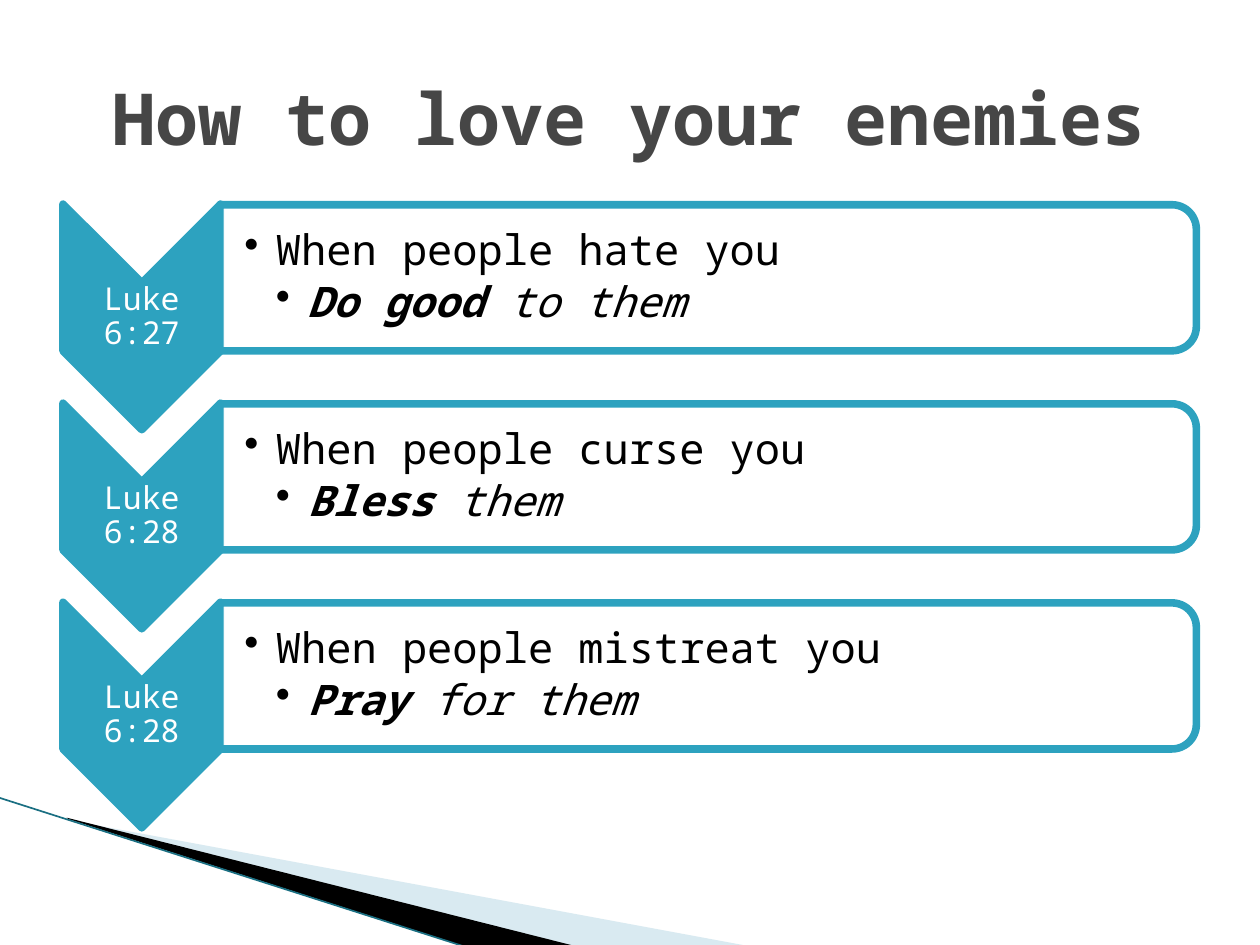
from lxml.etree import SubElement
from pptx import Presentation
from pptx.dml.color import RGBColor
from pptx.enum.shapes import MSO_CONNECTOR, MSO_SHAPE
from pptx.enum.text import MSO_ANCHOR, PP_ALIGN
from pptx.oxml.ns import qn
from pptx.util import Inches, Pt

TEAL = RGBColor(0x2D, 0xA2, 0xBF)
DARK_TEAL = RGBColor(0x1A, 0x6F, 0x82)
PALE_BLUE = RGBColor(0xA0, 0xCB, 0xDC)
BLACK = RGBColor(0, 0, 0)
WHITE = RGBColor(0xFF, 0xFF, 0xFF)
GRAY = RGBColor(0x46, 0x46, 0x46)
FONT = "Noto Sans Mono"


def paint(shape, color, opacity=100):
    shape.shadow.inherit = False
    shape.fill.solid()
    shape.fill.fore_color.rgb = color
    if opacity < 100:
        color_element = shape.fill._xPr.find(qn("a:solidFill"))[0]
        SubElement(color_element, qn("a:alpha"), val=str(opacity * 1000))


def add_run(paragraph, text, color, **styles):
    run = paragraph.add_run()
    run.text = text
    run.font.color.rgb = color
    for name, value in {"name": FONT, **styles}.items():
        setattr(run.font, name, value)


presentation = Presentation()
presentation.slide_width = Inches(10)
presentation.slide_height = Inches(7.5)
slide = presentation.slides.add_slide(presentation.slide_layouts[5])
shapes = slide.shapes

wedges = [
    ([(0.55, 6.51), (5.95, 7.51), (4.56, 7.51), (0.55, 6.5)], PALE_BLUE, 40),
    ([(0.53, 6.49), (4.57, 7.51), (3.72, 7.52), (0.54, 6.5)], BLACK, 100),
]
for corners, color, opacity in wedges:
    points = [(Inches(x), Inches(y)) for x, y in corners]
    builder = shapes.build_freeform(*points[0])
    builder.add_line_segments(points[1:], close=True)
    wedge = builder.convert_to_shape()
    paint(wedge, color, opacity)
    wedge.line.fill.background()

edge = shapes.add_connector(
    MSO_CONNECTOR.STRAIGHT, Inches(-0.01), Inches(6.33), Inches(3.71), Inches(7.52))
edge.line.color.rgb = DARK_TEAL
edge.line.width = Pt(0.95)
SubElement(edge._element.spPr, qn("a:effectLst"))

steps = [
    ("Luke 6:27", "When people hate you", "Do good", " to them"),
    ("Luke 6:28", "When people curse you", "Bless", " them"),
    ("Luke 6:28", "When people mistreat you", "Pray", " for them"),
]
for index, (verse, situation, action, target) in enumerate(steps):
    offset = 1.58 * index
    outlines = [
        (MSO_SHAPE.CHEVRON, 0.23, 1.89, 1.79, 1.25, TEAL, 100),
        (MSO_SHAPE.ROUND_2_SAME_RECTANGLE, 5.04, -1.67, 1.16, 7.75, WHITE, 90),
    ]
    for kind, left, top, width, height, color, opacity in outlines:
        shape = shapes.add_shape(
            kind, Inches(left), Inches(top + offset), Inches(width), Inches(height))
        shape.rotation = 90
        paint(shape, color, opacity)
        shape.line.color.rgb = TEAL
        shape.line.width = Pt(4.33)

    frames = []
    boxes = [(0.5, 2.25, 1.25, 0.54, 0.01, 0.01), (1.75, 1.68, 7.69, 1.05, 0.19, 0.02)]
    for left, top, width, height, inset, margin in boxes:
        frame = shapes.add_textbox(
            Inches(left), Inches(top + offset), Inches(width), Inches(height)).text_frame
        formats = {
            "word_wrap": True,
            "vertical_anchor": MSO_ANCHOR.MIDDLE,
            "margin_left": Inches(inset),
            "margin_right": Inches(margin),
            "margin_top": Inches(margin),
            "margin_bottom": Inches(margin),
        }
        for name, value in formats.items():
            setattr(frame, name, value)
        frames.append(frame)
    verse_frame, list_frame = frames

    paragraph = verse_frame.paragraphs[0]
    paragraph.alignment = PP_ALIGN.CENTER
    paragraph.line_spacing = 0.9
    add_run(paragraph, verse, WHITE, size=Pt(18))

    bullets = [
        [(situation, {})],
        [(action, {"bold": True, "italic": True}), (target, {"italic": True})],
    ]
    for level, runs in enumerate(bullets):
        paragraph = list_frame.add_paragraph() if level else list_frame.paragraphs[0]
        paragraph.level = level + 1
        paragraph.line_spacing = 0.9
        paragraph.space_after = Pt(3.6)
        properties = paragraph._p.get_or_add_pPr()
        properties.set("marL", str(Inches(0.25 * (level + 1))))
        properties.set("indent", str(Inches(-0.25)))
        SubElement(properties, qn("a:buChar"), char="•")
        for text, styles in runs:
            add_run(paragraph, text, BLACK, size=Pt(24), **styles)

title = shapes.title
title_place = {"left": 0.5, "top": 0.3, "width": 9, "height": 1.25}
for name, value in title_place.items():
    setattr(title, name, Inches(value))
title.text_frame.vertical_anchor = MSO_ANCHOR.MIDDLE
paragraph = title.text_frame.paragraphs[0]
paragraph.alignment = PP_ALIGN.CENTER
add_run(paragraph, "How to love your enemies", GRAY, size=Pt(41), bold=True)

presentation.save("out.pptx")
